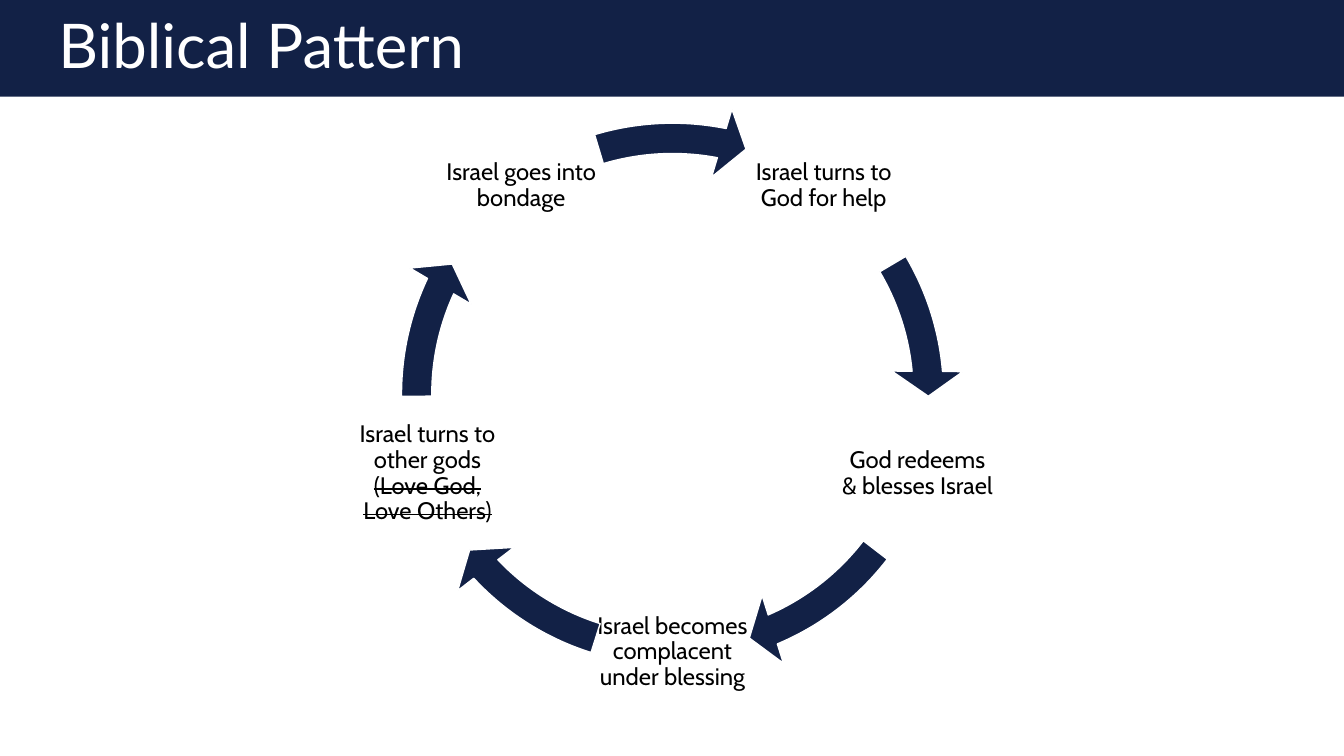
from math import cos, radians, sin

from pptx import Presentation
from pptx.dml.color import RGBColor
from pptx.enum.shapes import MSO_SHAPE
from pptx.enum.text import MSO_ANCHOR, PP_ALIGN
from pptx.util import Emu, Pt

NAVY = RGBColor(0x12, 0x21, 0x46)
WHITE = RGBColor(0xFF, 0xFF, 0xFF)
BLACK = RGBColor(0x00, 0x00, 0x00)
RECTANGLE = MSO_SHAPE.RECTANGLE
CIRCULAR_ARROW = MSO_SHAPE.CIRCULAR_ARROW
MIDDLE = MSO_ANCHOR.MIDDLE
LEFT, CENTER = PP_ALIGN.LEFT, PP_ALIGN.CENTER

PX = 9144
CENTER_X, CENTER_Y = 667, 391
NODE_RADIUS, NODE_SIZE, RING_SIZE = 256, 154, 578
FIRST_ANGLE = -54

STAGES = [
    (["Israel turns to God for help"], [], (212.93, 197.66)),
    (["God redeems & blesses Israel"], [], (40.15, 22.53)),
    (["Israel becomes complacent under blessing"], [], (82.11, 64.49)),
    (["Israel turns to other gods"], ["(Love God,", "Love Others)"], (122.98, 107.71)),
    (["Israel goes into bondage"], [], (168.66, 151.98)),
]


class CycleSlide:
    """Draws the title band, stages and arrows of a cycle on one slide."""

    def __init__(self, prs):
        self.slide = prs.slides.add_slide(prs.slide_layouts[6])
        self.shapes = self.slide.shapes

    def box(self, x, y, w, h):
        return [Emu(round(v) * PX) for v in (x, y, w, h)]

    def shape(self, kind, x, y, w, h):
        sp = self.shapes.add_shape(kind, *self.box(x, y, w, h))
        sp.shadow.inherit = False
        sp.fill.solid()
        sp.fill.fore_color.rgb = NAVY
        return sp

    def band(self, x, y, w, h):
        self.shape(RECTANGLE, x, y, w, h).line.fill.background()

    def text(self, x, y, w, h, lines, struck, font, size, color, align, margin):
        tf = self.shapes.add_textbox(*self.box(x, y, w, h)).text_frame
        tf.word_wrap = True
        tf.vertical_anchor = MIDDLE
        tf.margin_left = tf.margin_right = Emu(margin * PX)
        tf.margin_top = tf.margin_bottom = Emu(2 * PX)
        p = tf.paragraphs[0]
        p.alignment = align
        p.line_spacing = 0.9
        p.font.name = font
        p.font.size = Pt(size)
        p.font.color.rgb = color
        for i, line in enumerate(lines + struck):
            if i:
                p.add_line_break()
            r = p.add_run()
            r.text = line
            if line in struck:
                r._r.get_or_add_rPr().set("strike", "sngStrike")

    def title(self, text):
        self.text(48, 11, 1226, 74, [text], [], "Lato", 44, WHITE, LEFT, 10)

    def stage(self, angle, lines, struck):
        x = CENTER_X + NODE_RADIUS * cos(radians(angle)) - NODE_SIZE / 2
        y = CENTER_Y + NODE_RADIUS * sin(radians(angle)) - NODE_SIZE / 2
        self.text(x, y, NODE_SIZE, NODE_SIZE, lines, struck,
                  "Cabin", 17, BLACK, CENTER, 2)

    def arrow(self, end, start):
        half = RING_SIZE / 2
        sp = self.shape(CIRCULAR_ARROW, CENTER_X - half, CENTER_Y - half,
                        RING_SIZE, RING_SIZE)
        sp.line.color.rgb = WHITE
        sp.line.width = Pt(1)
        for i, value in enumerate((0.052, 3.36, end, start, 0.061)):
            sp.adjustments[i] = value


def main():
    prs = Presentation()
    prs.slide_width, prs.slide_height = Emu(1333 * PX), Emu(750 * PX)
    s = CycleSlide(prs)
    s.band(0, 0, 1333, 96)
    s.title("Biblical Pattern")
    for i, (lines, struck, sweep) in enumerate(STAGES):
        s.stage(FIRST_ANGLE + i * 360 / len(STAGES), lines, struck)
        s.arrow(*sweep)
    prs.save("out.pptx")


if __name__ == "__main__":
    main()
